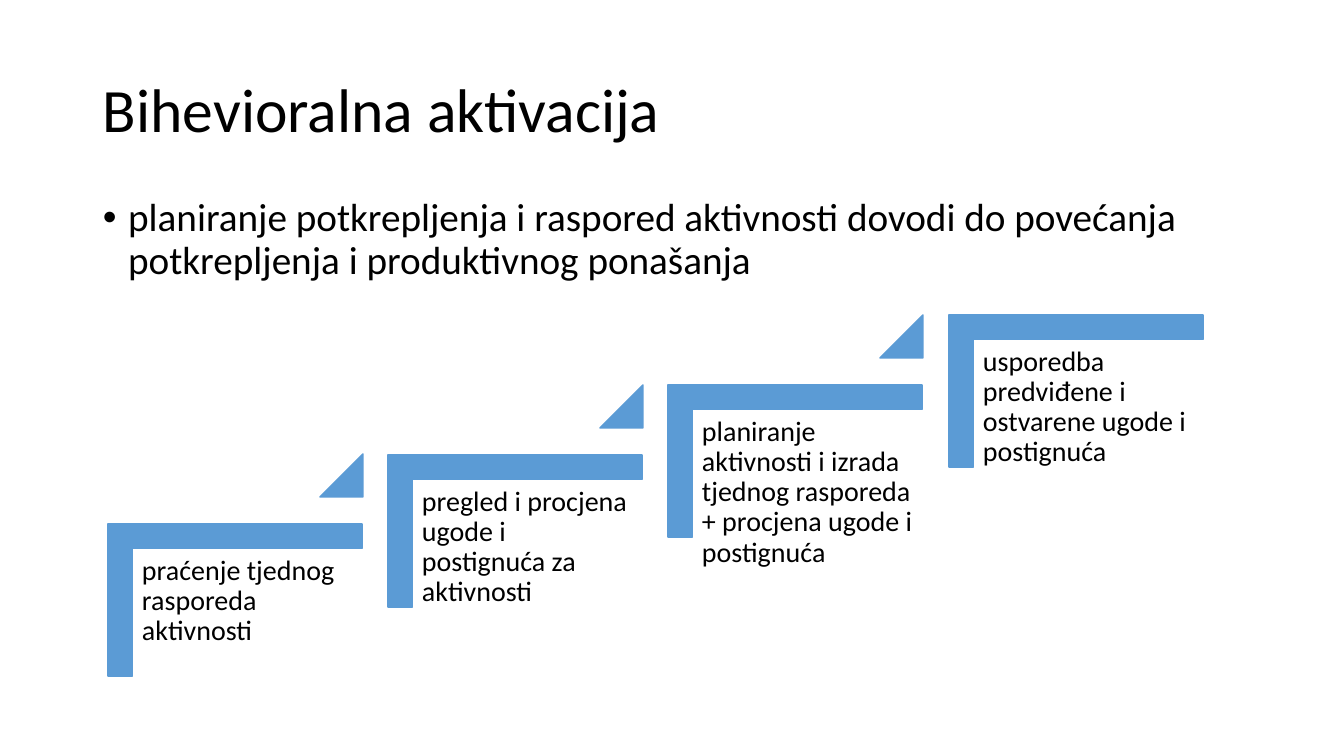
import pptx
import pptx.dml.color
import pptx.enum.shapes
import pptx.enum.text
import pptx.util
from lxml import etree

PX = 9144000 / 1008  # EMU in one px, at 100.8 px to the inch
BLUE = "5B9BD5"
BLACK = "000000"
SHAPES = pptx.enum.shapes.MSO_SHAPE
ANCHORS = pptx.enum.text.MSO_ANCHOR


def px(*lengths):
    """Turn px lengths into EMU."""
    return [round(length * PX) for length in lengths]


def add_text(box, text, size, inset_x, inset_y, anchor=ANCHORS.TOP):
    shape = slide.shapes.add_textbox(*px(*box))
    side, edge = px(inset_x, inset_y)
    frame_format = {
        "word_wrap": True,
        "vertical_anchor": anchor,
        "margin_left": side,
        "margin_right": side,
        "margin_top": edge,
        "margin_bottom": edge,
    }
    for name, value in frame_format.items():
        setattr(shape.text_frame, name, value)
    paragraph = shape.text_frame.paragraphs[0]
    paragraph.line_spacing = 0.9
    run = paragraph.add_run()
    run.text = text
    for name, value in {"name": "Calibri", "size": pptx.util.Pt(size)}.items():
        setattr(run.font, name, value)
    run.font.color.rgb = pptx.dml.color.RGBColor.from_string(BLACK)
    return paragraph


presentation = pptx.Presentation()
presentation.slide_width, presentation.slide_height = px(1344, 756)
slide = presentation.slides.add_slide(presentation.slide_layouts[6])

add_text((93, 40, 1159, 146), "Bihevioralna aktivacija", 44, 10, 5, ANCHORS.MIDDLE)

bullet_paragraph = add_text(
    (93, 193, 1159, 251),
    "planiranje potkrepljenja i raspored aktivnosti dovodi do povećanja "
    "potkrepljenja i produktivnog ponašanja",
    28, 10, 5,
)
bullet_paragraph.space_before = pptx.util.Pt(10)
properties = bullet_paragraph._p.get_or_add_pPr()
indent = pptx.util.Inches(0.25)
properties.set("marL", str(indent))
properties.set("indent", str(-indent))
namespace = "{http://schemas.openxmlformats.org/drawingml/2006/main}"
etree.SubElement(properties, namespace + "buFont", typeface="Arial")
etree.SubElement(properties, namespace + "buChar", char="•")

steps = [
    "praćenje tjednog rasporeda aktivnosti",
    "pregled i procjena ugode i postignuća za aktivnosti",
    "planiranje aktivnosti i izrada tjednog rasporeda + procjena ugode i postignuća",
    "usporedba predviđene i ostvarene ugode i postignuća",
]
STAIRS_WIDTH, STAIRS_HEIGHT = 841, 209  # from the first step to the last
last = len(steps) - 1

for index, text in enumerate(steps):
    right = STAIRS_WIDTH * index // last
    up = STAIRS_HEIGHT * index // last
    parts = [(SHAPES.CORNER, (159 + right, 473 - up, 152, 254), 90, (0.16, 0.16))]
    if index < last:
        triangle_box = (320 + right, 454 - up, 43, 43)
        parts.append((SHAPES.ISOSCELES_TRIANGLE, triangle_box, 0, (1,)))
    for kind, box, rotation, adjustments in parts:
        shape = slide.shapes.add_shape(kind, *px(*box))
        shape.rotation = rotation
        shape.shadow.inherit = False
        for position, value in enumerate(adjustments):
            shape.adjustments[position] = value
        shape.fill.solid()
        for color in (shape.fill.fore_color, shape.line.color):
            color.rgb = pptx.dml.color.RGBColor.from_string(BLUE)
        shape.line.width = pptx.util.Pt(1)
    add_text((134 + right, 548 - up, 229, 201), text, 20, 8, 8)

presentation.save("out.pptx")
